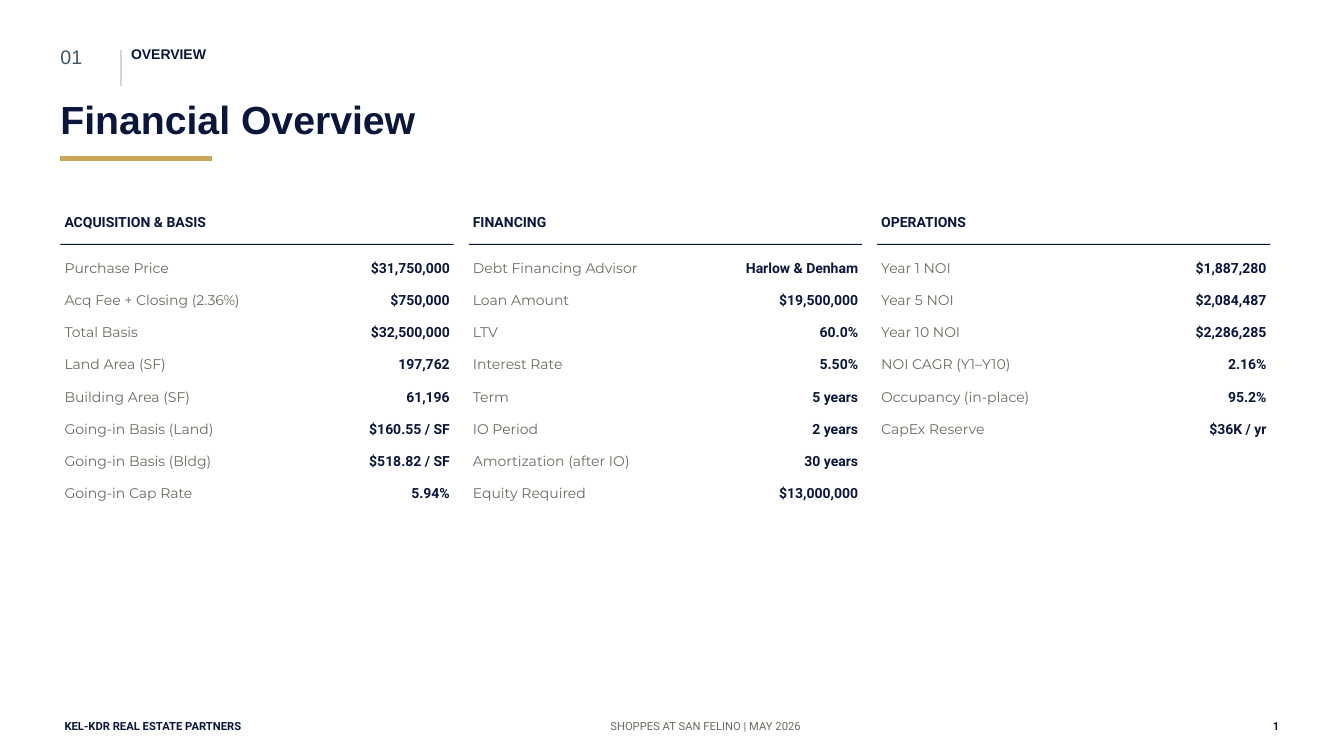
from pptx import Presentation
from pptx.dml.color import RGBColor
from pptx.enum.shapes import MSO_CONNECTOR, MSO_SHAPE
from pptx.enum.text import MSO_ANCHOR, MSO_AUTO_SIZE, PP_ALIGN
from pptx.oxml.ns import qn
from pptx.util import Emu, Pt

PX = 9144  # 100 px to the inch
LEFT, CENTER, RIGHT = PP_ALIGN.LEFT, PP_ALIGN.CENTER, PP_ALIGN.RIGHT
TOP = MSO_ANCHOR.TOP
GROW = MSO_AUTO_SIZE.SHAPE_TO_FIT_TEXT
RECT, STRAIGHT = MSO_SHAPE.RECTANGLE, MSO_CONNECTOR.STRAIGHT

NAVY, GREY, SLATE, GOLD, RULE, WHITE = (
    RGBColor.from_string(c)
    for c in ("0B163C", "6E6A61", "3E5668", "C9A557", "D4D6DC", "FFFFFF"))
# Text styles: font, size, colour, bold
THEME = {
    "number": ("Arial", 14, SLATE, False),
    "section": ("Arial", 10, NAVY, True),
    "title": ("Arial", 28, NAVY, True),
    "heading": ("Roboto", 10, NAVY, True),
    "label": ("Montserrat", 10, GREY, False),
    "value": ("Roboto", 10, NAVY, True),
    "footer": ("Roboto", 8, GREY, False),
    "footer_bold": ("Roboto", 8, NAVY, True),
}

COLUMNS = [
    ("ACQUISITION & BASIS", [
        ("Purchase Price", "$31,750,000"),
        ("Acq Fee + Closing (2.36%)", "$750,000"),
        ("Total Basis", "$32,500,000"),
        ("Land Area (SF)", "197,762"),
        ("Building Area (SF)", "61,196"),
        ("Going-in Basis (Land)", "$160.55 / SF"),
        ("Going-in Basis (Bldg)", "$518.82 / SF"),
        ("Going-in Cap Rate", "5.94%"),
    ]),
    ("FINANCING", [
        ("Debt Financing Advisor", "Harlow & Denham"),
        ("Loan Amount", "$19,500,000"),
        ("LTV", "60.0%"),
        ("Interest Rate", "5.50%"),
        ("Term", "5 years"),
        ("IO Period", "2 years"),
        ("Amortization (after IO)", "30 years"),
        ("Equity Required", "$13,000,000"),
    ]),
    ("OPERATIONS", [
        ("Year 1 NOI", "$1,887,280"),
        ("Year 5 NOI", "$2,084,487"),
        ("Year 10 NOI", "$2,286,285"),
        ("NOI CAGR (Y1–Y10)", "2.16%"),
        ("Occupancy (in-place)", "95.2%"),
        ("CapEx Reserve", "$36K / yr"),
    ]),
]

prs = Presentation()
prs.slide_width, prs.slide_height = Emu(1333 * PX), Emu(750 * PX)
s = prs.slides.add_slide(prs.slide_layouts[5])
s.background.fill.solid()
s.background.fill.fore_color.rgb = WHITE


def add_text(text, style, x, y, w, h, align=LEFT, inset=(4, 2), sp=None):
    box = [Emu(v * PX) for v in (x, y, w, h)]
    if sp is None:
        sp = s.shapes.add_textbox(*box)
    sp.left, sp.top, sp.width, sp.height = box
    tf = sp.text_frame
    tf.word_wrap, tf.auto_size, tf.vertical_anchor = True, GROW, TOP
    tf.margin_left = tf.margin_right = Emu(inset[0] * PX)
    tf.margin_top = tf.margin_bottom = Emu(inset[1] * PX)
    p = tf.paragraphs[0]
    p.alignment = align
    r = p.add_run()
    r.text = text
    r.font.name, size, r.font.color.rgb, r.font.bold = THEME[style]
    r.font.size = Pt(size)


def add_bar(x, y, w, h, color):
    sp = s.shapes.add_shape(RECT, *(Emu(v * PX) for v in (x, y, w, h)))
    sp.shadow.inherit = False
    sp.fill.solid()
    sp.fill.fore_color.rgb = color
    sp.line.fill.background()
    return sp


# Header
add_text("01", "number", 60, 45, 70, 45, inset=(0, 0))
divider = s.shapes.add_connector(
    STRAIGHT, *(Emu(v * PX) for v in (120, 50, 120, 85)))
divider.line.color.rgb = RULE
divider.line.width = Pt(1.5)
divider._element.spPr.append(
    divider._element.spPr.makeelement(qn("a:effectLst"), {}))
add_text("OVERVIEW", "section", 130, 45, 800, 40, inset=(0, 0))
add_text("Financial Overview", "title", 60, 95, 1213, 55, inset=(0, 0),
         sp=s.shapes.title)
accent = add_bar(60, 155, 150, 4, GOLD)
accent.line.color.rgb = GOLD
accent.line.width = Pt(0.5)

# Three columns of figures
COL_W, COL_GAP, LABEL_W, ROW_STEP = 390, 15, 215, 32
for i, (heading, rows) in enumerate(COLUMNS):
    x = 60 + i * (COL_W + COL_GAP)
    add_text(heading, "heading", x, 210, COL_W, 30)
    add_bar(x, 242, COL_W, 1, NAVY)
    for j, (label, value) in enumerate(rows):
        y = 255 + j * ROW_STEP
        add_text(label, "label", x, y, LABEL_W, 30)
        add_text(value, "value", x + LABEL_W, y, COL_W - LABEL_W, 30, RIGHT)

# Footer
add_text("KEL-KDR REAL ESTATE PARTNERS", "footer_bold", 60, 712, 500, 30)
add_text("SHOPPES AT SAN FELINO | MAY 2026", "footer", 500, 712, 400, 30, CENTER)
add_text("1", "footer_bold", 1173, 712, 100, 30, RIGHT)

prs.save("out.pptx")
